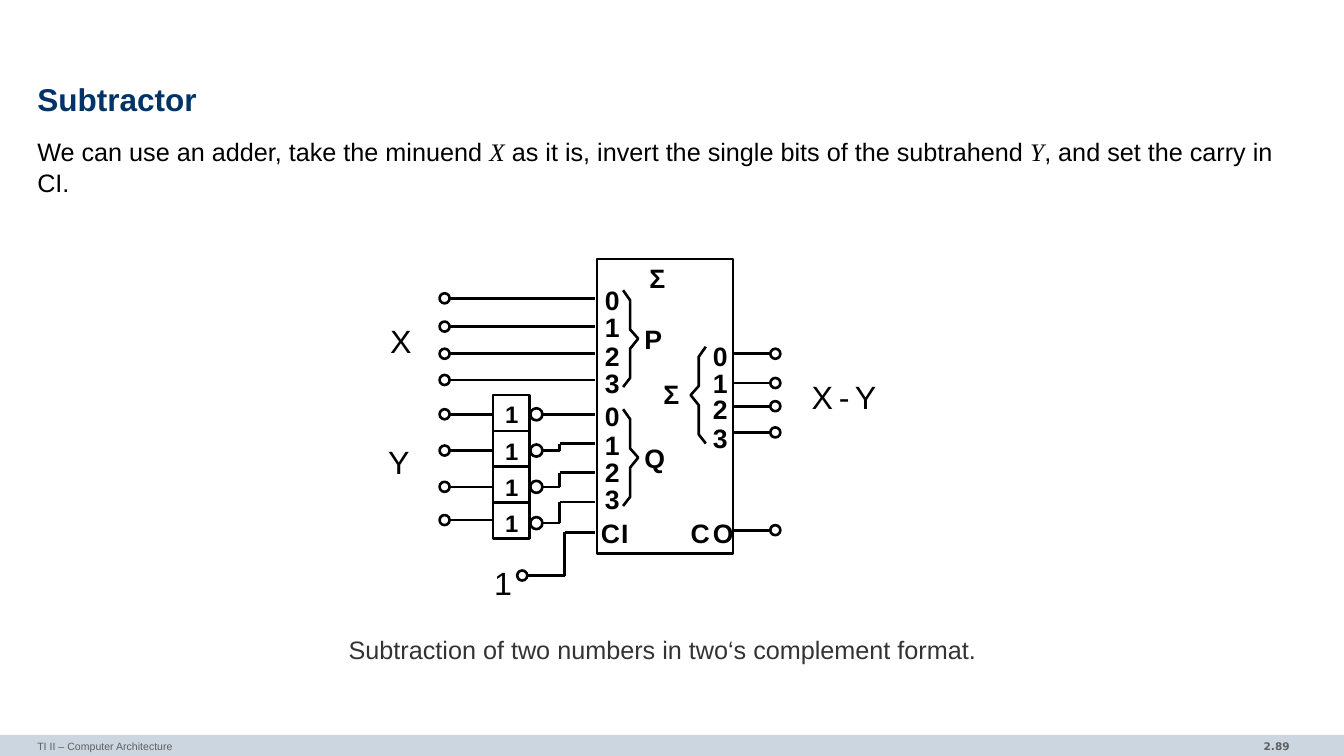
from lxml import etree
from pptx import Presentation
from pptx.dml.color import RGBColor
from pptx.enum.shapes import MSO_CONNECTOR, MSO_SHAPE
from pptx.enum.text import MSO_ANCHOR, PP_ALIGN
from pptx.oxml.ns import qn
from pptx.util import Inches, Pt

BLACK = RGBColor(0x00, 0x00, 0x00)
WHITE = RGBColor(0xFF, 0xFF, 0xFF)
NAVY = RGBColor(0x00, 0x33, 0x66)
DARK_GREY = RGBColor(0x33, 0x33, 0x33)
GREY = RGBColor(0x5F, 0x5F, 0x5F)
FOOTER_BLUE = RGBColor(0xCC, 0xD6, 0xE0)

LINE_WIDTH = Pt(1.88)
PIN = 0.1
BUBBLE = 0.12
GLYPH_EMS = {"Σ": 0.6, "C": 0.72, "I": 0.28, "O": 0.78, "Q": 0.78,
             "P": 0.67, "X": 0.67, "Y": 0.67, "-": 0.33}
DIGIT_EMS = 0.56


def add_text(page, left, top, width, height, text, size, color=BLACK,
             bold=False, font="Arial", margins=(0, 0), wrap=True):
    """Text box with (side, top and bottom) margins; returns its paragraph."""
    box = page.shapes.add_textbox(Inches(left), Inches(top), Inches(width), Inches(height))
    frame = box.text_frame
    frame.word_wrap = wrap
    frame.margin_left = frame.margin_right = Inches(margins[0])
    frame.margin_top = frame.margin_bottom = Inches(margins[1])
    frame.text = text
    para = frame.paragraphs[0]
    for span in para.runs:
        span.font.size = Pt(size)
        span.font.name = font
        span.font.bold = bold
        span.font.color.rgb = color
    return para


def add_glyph(page, left, top, glyph, size=19, bold=True):
    width = GLYPH_EMS.get(glyph, DIGIT_EMS) * size / 72
    add_text(page, left, top, width, size / 59, glyph, size, bold=bold, wrap=False)


def add_wire(page, *points):
    """Chain of straight lines; returns the first one."""
    wires = []
    for (x1, y1), (x2, y2) in zip(points, points[1:]):
        wire = page.shapes.add_connector(
            MSO_CONNECTOR.STRAIGHT, Inches(x1), Inches(y1), Inches(x2), Inches(y2))
        wire.line.color.rgb = BLACK
        wire.line.width = LINE_WIDTH
        properties = wire._element.find(qn("p:spPr"))
        etree.SubElement(properties, qn("a:effectLst"))
        wires.append(wire)
    return wires[0]


def outline(shape):
    shape.shadow.inherit = False
    shape.line.color.rgb = BLACK
    shape.line.width = LINE_WIDTH
    shape.fill.background()
    return shape


def add_frame(page, left, top, width, height):
    return outline(page.shapes.add_shape(
        MSO_SHAPE.RECTANGLE, Inches(left), Inches(top), Inches(width), Inches(height)))


def add_circle(page, center_x, center_y, size):
    circle = outline(page.shapes.add_shape(
        MSO_SHAPE.OVAL, Inches(center_x - size / 2), Inches(center_y - size / 2),
        Inches(size), Inches(size)))
    circle.fill.solid()
    circle.fill.fore_color.rgb = WHITE


def add_brace(page, x, top, direction):
    """Angular brace whose tip points right (1) or left (-1) of x."""
    steps = [(0, 0), (0.07, 0.1), (0.07, 0.39), (0.15, 0.48),
             (0.07, 0.58), (0.07, 0.87), (0, 0.96)]
    points = [(Inches(x + direction * dx), Inches(top + dy)) for dx, dy in steps]
    builder = page.shapes.build_freeform(*points[0], scale=1.0)
    builder.add_line_segments(points[1:], close=False)
    outline(builder.convert_to_shape())


def add_adder(page, left, top, width, height):
    frame = add_frame(page, left, top, width, height)
    digit_columns = [
        (0.08, (0.25, 0.51, 0.8, 1.07)),
        (0.08, (1.4, 1.69, 1.95, 2.22)),
        (1.15, (0.8, 1.07, 1.33, 1.62)),
    ]
    for x, rows in digit_columns:
        for digit, y in enumerate(rows):
            add_glyph(page, left + x, top + y, str(digit))
    labels = [("Σ", 0.52, 0.03), ("P", 0.47, 0.63), ("Q", 0.47, 1.81), ("Σ", 0.66, 1.18),
              ("C", 0.04, 2.56), ("I", 0.24, 2.56), ("C", 0.93, 2.56), ("O", 1.15, 2.56)]
    for glyph, x, y in labels:
        add_glyph(page, left + x, top + y, glyph)
    for x, y, direction in [(0.26, 0.31, 1), (0.26, 1.49, 1), (1.08, 0.87, -1)]:
        add_brace(page, left + x, top + y, direction)
    return frame


def add_inverters(page, left, top, width, height, adder_left):
    """Column of four inverters with their wires to the adder."""
    add_frame(page, left, top, width, height)
    cell = height / 4
    right = left + width
    bend = right + 0.3
    for row in range(4):
        if row:
            add_wire(page, (left, top + row * cell), (right, top + row * cell))
        center = top + 0.19 + 0.36 * row
        target = top + 0.19 + 0.29 * row
        add_glyph(page, left + 0.12, center - 0.14, "1", 17)
        add_circle(page, right + 0.07, center, BUBBLE)
        start = (right + 0.14, center)
        end = (adder_left, target)
        if row:
            add_wire(page, start, (bend, center), (bend, target), end)
        else:
            add_wire(page, start, end)


def add_inputs(page, pin_x, wire_end, rows):
    for y in rows:
        add_wire(page, (pin_x + PIN / 2, y), (wire_end, y))
        add_circle(page, pin_x, y, PIN)


def add_outputs(page, adder, left, top, height):
    pin_x = left + 0.42
    for row in (0.94, 1.23, height / 2, 1.72, 2.69):
        y = top + row
        wire = add_wire(page, (left, y), (pin_x - PIN / 2, y))
        if row == height / 2:
            wire.begin_connect(adder, 3)
        add_circle(page, pin_x, y, PIN)
    for glyph, x in [("X", 0.78), ("-", 1.05), ("Y", 1.21)]:
        add_glyph(page, left + x, top + 1.17, glyph, 23, False)


def add_subtractor(page, left, top):
    """Whole circuit; left is the edge of the X label, top that of the adder."""
    adder_left, adder_width, adder_height = left + 2.07, 1.35, 2.92
    wire_end = adder_left - 0.02
    pin_x = left + 0.56
    inverter_left = left + 1.04
    adder = add_adder(page, adder_left, top, adder_width, adder_height)
    add_inputs(page, pin_x, wire_end, [top + y for y in (0.39, 0.67, 0.94, 1.2)])
    add_inputs(page, pin_x, inverter_left, [top + y for y in (1.54, 1.9, 2.26, 2.59)])
    add_inverters(page, inverter_left, top + 1.35, 0.36, 1.42, wire_end)
    add_outputs(page, adder, adder_left + adder_width, top, adder_height)

    carry_x, carry_y = left + 1.33, top + 3.14
    bend = left + 1.75
    add_wire(page, (carry_x + PIN / 2, carry_y), (bend, carry_y),
             (bend, top + 2.71), (wire_end, top + 2.71))
    add_circle(page, carry_x, carry_y, PIN)
    for glyph, x, y in [("X", 0.02, 0.62), ("Y", 0, 1.82), ("1", 1.05, 3.02)]:
        add_glyph(page, left + x, top + y, glyph, 23, False)


def add_heading(page, left, top, width):
    title = add_text(page, left, top, width, 0.47, "Subtractor", 22.5, NAVY, bold=True)
    title.line_spacing = 0.85
    title._parent.vertical_anchor = MSO_ANCHOR.MIDDLE

    pieces = ["We can use an adder, take the minuend ", "X",
              " as it is, invert the single bits of the subtrahend ", "Y",
              ", and set the carry in CI."]
    para = add_text(page, left, top + 0.57, width, 5.74, pieces[0], 18)
    para.line_spacing = 1.02
    for piece in pieces[1:]:
        span = para.add_run()
        span.text = piece
        variable = piece in ("X", "Y")
        span.font.name = "Times New Roman" if variable else "Arial"
        span.font.italic = variable
        span.font.size = Pt(18)
        span.font.color.rgb = BLACK


def add_footer(page, top, width, height):
    band = page.shapes.add_shape(
        MSO_SHAPE.RECTANGLE, 0, Inches(top), Inches(width), Inches(height))
    band.shadow.inherit = False
    band.fill.solid()
    band.fill.fore_color.rgb = FOOTER_BLUE
    band.line.fill.background()
    add_text(page, 0.37, top, 8.72, height, "TI II – Computer Architecture", 7.5, GREY,
             margins=(0, 0.05))
    number = add_text(page, 11.1, top, 1.79, height, "2.89", 7.5, GREY, bold=True,
                      font="DejaVu Sans", margins=(0.1, 0.05))
    number.alignment = PP_ALIGN.RIGHT


def main():
    deck = Presentation()
    deck.slide_width, deck.slide_height = Inches(13.33), Inches(7.5)
    page = deck.slides.add_slide(deck.slide_layouts[6])
    add_footer(page, 7.29, 13.33, 0.21)
    add_heading(page, 0.37, 0.78, 12.6)
    add_subtractor(page, 3.85, 2.57)
    add_text(page, 3.36, 6.24, 6.77, 0.4,
             "Subtraction of two numbers in two‘s complement format.", 18, DARK_GREY,
             margins=(0.1, 0.05))
    deck.save("out.pptx")


if __name__ == "__main__":
    main()
